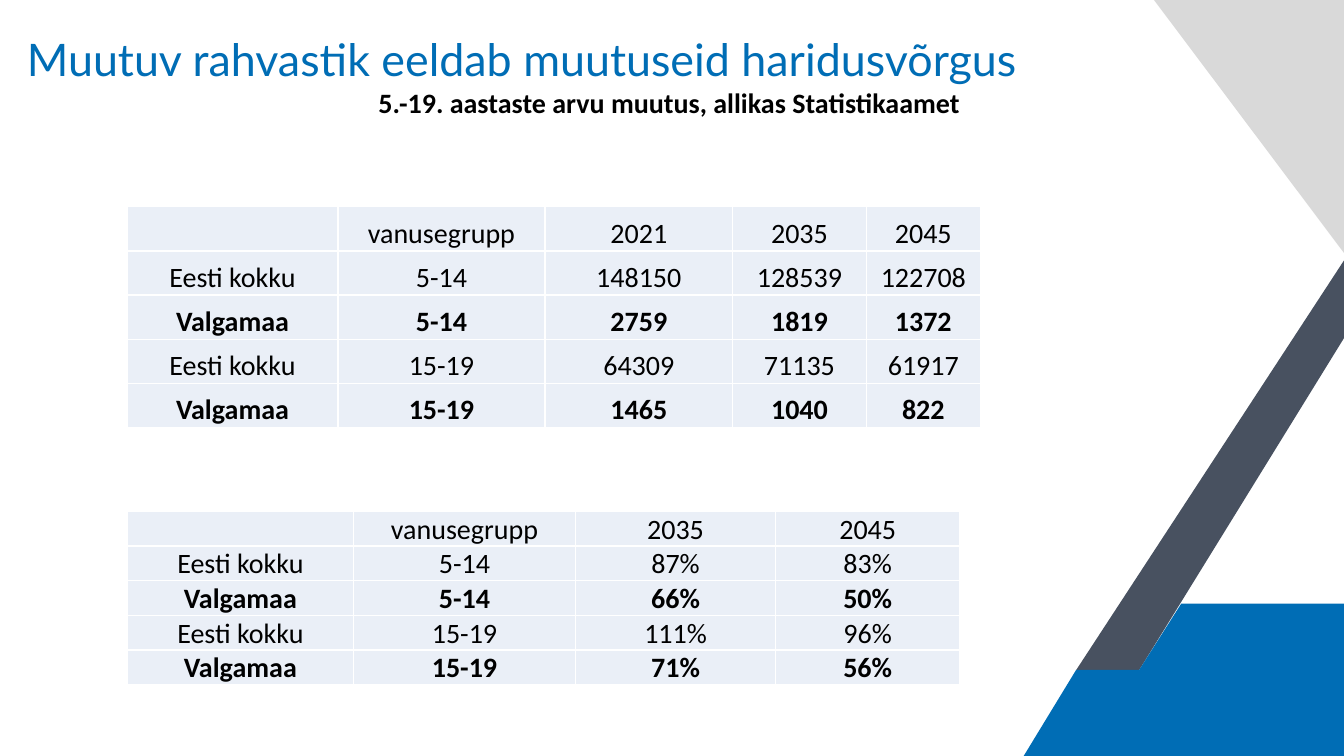
from dataclasses import dataclass

from pptx import Presentation
from pptx.dml.color import RGBColor
from pptx.enum.text import MSO_ANCHOR as Anchor, MSO_AUTO_SIZE as AutoSize, PP_ALIGN as Align
from pptx.util import Emu, Pt

EMU_PER_PX = 9525
SLIDE_WIDTH, SLIDE_HEIGHT = 1280, 720


@dataclass(frozen=True)
class Theme:
    blue: str = "006DB5"
    slate: str = "485160"
    grey: str = "D9D9D9"
    cell: str = "EAEFF7"
    black: str = "000000"
    title_font: str = "Lato"
    body_font: str = "Calibri"
    title_size: int = 32
    body_size: int = 20


THEME = Theme()

SLATE_BAND = [(1280, 248), (1025, 638), (1085, 638), (1280, 322)]
BLUE_CORNER = [(1280, 575), (1125, 575), (1085, 638), (1025, 638), (975, 720), (1280, 720)]
GREY_CORNER = [(1280, 241), (1099, 0), (1280, 0)]

POPULATION = [
    ("", "vanusegrupp", "2021", "2035", "2045"),
    ("Eesti kokku", "5-14", "148150", "128539", "122708"),
    ("Valgamaa", "5-14", "2759", "1819", "1372"),
    ("Eesti kokku", "15-19", "64309", "71135", "61917"),
    ("Valgamaa", "15-19", "1465", "1040", "822"),
]
SHARE_OF_2021 = [
    ("", "vanusegrupp", "2035", "2045"),
    ("Eesti kokku", "5-14", "87%", "83%"),
    ("Valgamaa", "5-14", "66%", "50%"),
    ("Eesti kokku", "15-19", "111%", "96%"),
    ("Valgamaa", "15-19", "71%", "56%"),
]


def px(length):
    return Emu(length * EMU_PER_PX)


def rgb(color):
    return RGBColor.from_string(color)


def style_paragraph(para, font_name, size, color, align, bold=False):
    para.alignment = align
    font = para.font
    font.name, font.size, font.bold = font_name, Pt(size), bold
    font.color.rgb = rgb(color)


def add_polygon(slide, points, color):
    builder = slide.shapes.build_freeform(*points[0], scale=EMU_PER_PX)
    builder.add_line_segments(points[1:], close=True)
    polygon = builder.convert_to_shape()
    polygon.shadow.inherit = False
    polygon.fill.solid()
    polygon.fill.fore_color.rgb = rgb(color)
    polygon.line.fill.background()


def fill_title(title, heading, subheading):
    title.left, title.top, title.width, title.height = px(16), px(25), px(1249), px(94)
    frame = title.text_frame
    frame.word_wrap = True
    frame.auto_size = AutoSize.SHAPE_TO_FIT_TEXT
    frame.vertical_anchor = Anchor.TOP
    frame.text = heading
    style_paragraph(frame.paragraphs[0], THEME.title_font, THEME.title_size,
                    THEME.blue, Align.LEFT)
    para = frame.add_paragraph()
    para.text = subheading
    style_paragraph(para, THEME.body_font, THEME.body_size, THEME.black, Align.CENTER, bold=True)


def fill_cell(cell, text, bold):
    cell.fill.solid()
    cell.fill.fore_color.rgb = rgb(THEME.cell)
    cell.vertical_anchor = Anchor.BOTTOM
    cell.margin_left = cell.margin_right = cell.margin_top = px(1)
    cell.margin_bottom = 0
    cell.text = text
    style_paragraph(cell.text_frame.paragraphs[0], THEME.body_font, THEME.body_size,
                    THEME.black, Align.CENTER, bold)


def add_data_table(slide, rows, left, top, widths, row_height):
    """Add a table whose county (Valgamaa) rows are bold."""
    table = slide.shapes.add_table(len(rows), len(widths), px(left), px(top),
                                   px(sum(widths)), px(row_height * len(rows))).table
    table.first_row = table.horz_banding = False
    for column, width in zip(table.columns, widths):
        column.width = px(width)
    for table_row, values in zip(table.rows, rows):
        table_row.height = px(row_height)
        for cell, text in zip(table_row.cells, values):
            fill_cell(cell, text, bold=values[0] == "Valgamaa")


def main():
    deck = Presentation()
    deck.slide_width, deck.slide_height = px(SLIDE_WIDTH), px(SLIDE_HEIGHT)
    slide = deck.slides.add_slide(deck.slide_layouts[5])

    add_polygon(slide, SLATE_BAND, THEME.slate)
    add_polygon(slide, BLUE_CORNER, THEME.blue)
    add_polygon(slide, GREY_CORNER, THEME.grey)
    fill_title(slide.shapes.title, "Muutuv rahvastik eeldab muutuseid haridusvõrgus",
               "5.-19. aastaste arvu muutus, allikas Statistikaamet ")
    add_data_table(slide, POPULATION, 121, 197, [201, 197, 179, 127, 109], 42)
    add_data_table(slide, SHARE_OF_2021, 121, 487, [216, 211, 191, 175], 33)

    deck.save("out.pptx")


if __name__ == "__main__":
    main()
